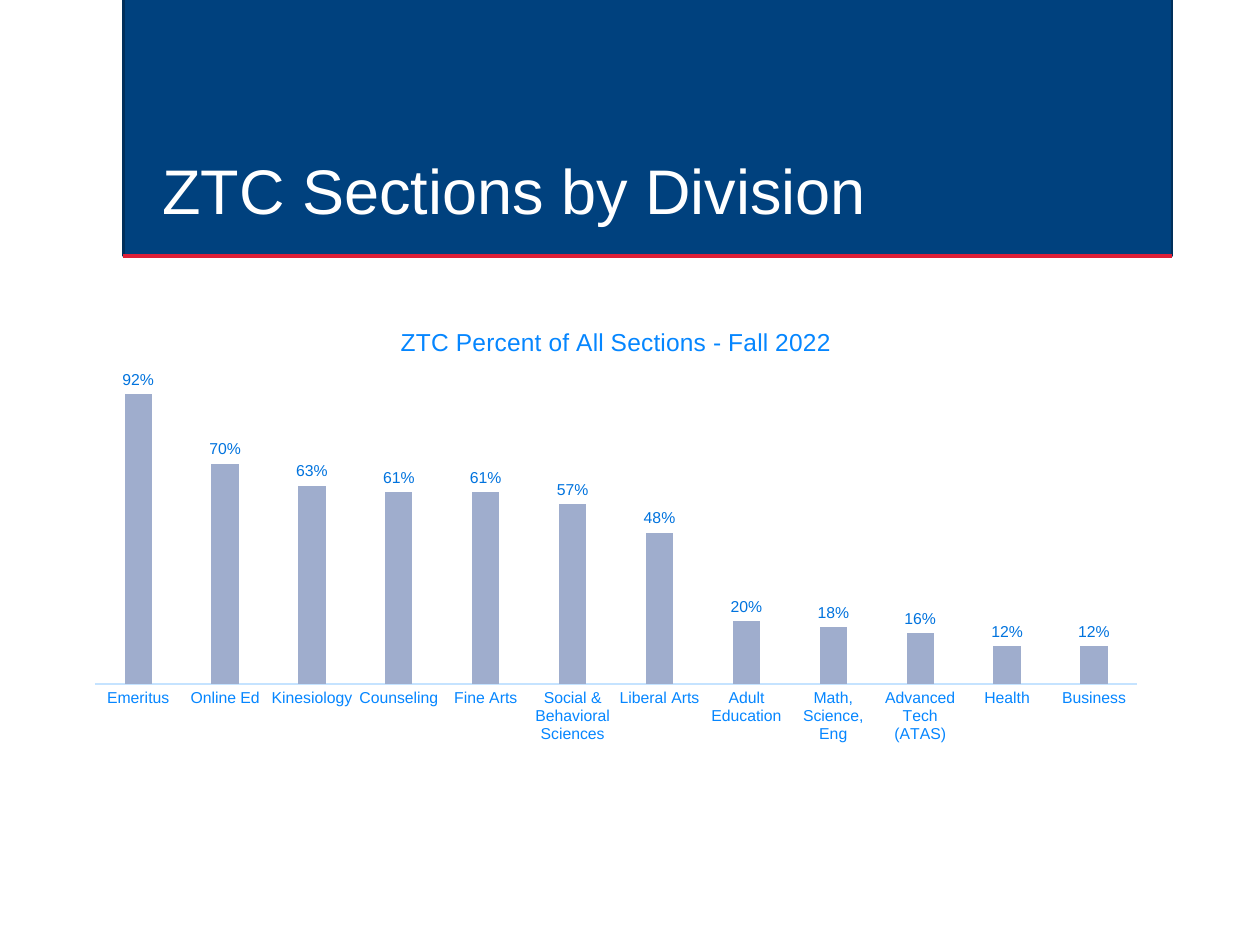
from lxml.etree import SubElement
from pptx import Presentation
from pptx.chart.data import CategoryChartData
from pptx.dml.color import RGBColor
from pptx.enum.chart import XL_CHART_TYPE, XL_LABEL_POSITION, XL_TICK_LABEL_POSITION, XL_TICK_MARK
from pptx.enum.shapes import MSO_CONNECTOR, MSO_SHAPE
from pptx.enum.text import MSO_ANCHOR
from pptx.oxml.ns import qn
from pptx.util import Inches, Pt

NAVY = RGBColor(0x00, 0x41, 0x7E)
DARK_NAVY = RGBColor(0x00, 0x2F, 0x5B)
RED = RGBColor(0xDE, 0x1F, 0x37)
WHITE = RGBColor(0xFF, 0xFF, 0xFF)
BAR_BLUE = RGBColor(0x9F, 0xAD, 0xCD)
AXIS_BLUE = RGBColor(0xC5, 0xE3, 0xFF)
TEXT_BLUE = RGBColor(0x05, 0x86, 0xFF)
VALUE_BLUE = RGBColor(0x00, 0x73, 0xDE)
FONT = "Arial"

WIDTH, HEIGHT = Inches(10), Inches(7.5)
BAND_LEFT, BAND_TOP = Inches(0.98), Inches(-0.02)
BAND_WIDTH, BAND_HEIGHT = Inches(8.32), Inches(2.05)
PLOT_SHARES = {"x": 0.02, "y": 0.14, "w": 0.96, "h": 0.7}

ZTC_SHARES = {
    "Emeritus": 0.92,
    "Online Ed": 0.70,
    "Kinesiology": 0.63,
    "Counseling": 0.61,
    "Fine Arts": 0.61,
    "Social & Behavioral Sciences": 0.57,
    "Liberal Arts": 0.48,
    "Adult Education": 0.20,
    "Math, Science, Eng": 0.18,
    "Advanced Tech (ATAS)": 0.16,
    "Health": 0.12,
    "Business": 0.12,
}


def style_font(font, size, color):
    font.name = FONT
    font.size = Pt(size)
    font.bold = False
    font.color.rgb = color


def add_band(slide):
    band = slide.shapes.add_shape(
        MSO_SHAPE.RECTANGLE, BAND_LEFT, BAND_TOP, BAND_WIDTH, BAND_HEIGHT)
    band.shadow.inherit = False
    band.fill.solid()
    band.fill.fore_color.rgb = NAVY
    band.line.color.rgb = DARK_NAVY
    band.line.width = Pt(1.25)


def add_underline(slide):
    bottom = BAND_TOP + BAND_HEIGHT
    underline = slide.shapes.add_connector(
        MSO_CONNECTOR.STRAIGHT, BAND_LEFT, bottom, BAND_LEFT + BAND_WIDTH, bottom)
    underline.line.color.rgb = RED
    underline.line.width = Pt(2.5)
    SubElement(underline._element.spPr, qn("a:effectLst"))


def add_heading(slide, wording):
    heading = slide.shapes.add_textbox(
        Inches(1.19), Inches(0.88), Inches(7.88), Inches(0.98)).text_frame
    heading.word_wrap = True
    heading.vertical_anchor = MSO_ANCHOR.BOTTOM
    line = heading.paragraphs[0]
    line.text = wording
    line.line_spacing = 0.9
    style_font(line.font, 36, WHITE)


def place_plot(chart):
    plot_area = chart._chartSpace.chart.plotArea
    for old_layout in plot_area.findall(qn("c:layout")):
        plot_area.remove(old_layout)
    layout = SubElement(plot_area, qn("c:layout"))
    plot_area.insert(0, layout)
    manual = SubElement(layout, qn("c:manualLayout"))
    settings = {"layoutTarget": "inner", "xMode": "edge", "yMode": "edge", **PLOT_SHARES}
    for tag, value in settings.items():
        SubElement(manual, qn(f"c:{tag}")).set("val", str(value))


def style_axes(chart):
    divisions = chart.category_axis
    divisions.major_tick_mark = XL_TICK_MARK.NONE
    divisions.minor_tick_mark = XL_TICK_MARK.NONE
    divisions.format.line.color.rgb = AXIS_BLUE
    divisions.format.line.width = Pt(0.75)
    style_font(divisions.tick_labels.font, 9, TEXT_BLUE)

    percent = chart.value_axis
    percent.minimum_scale = 0
    percent.maximum_scale = 1
    percent.major_unit = 0.2
    percent.has_major_gridlines = False
    percent.tick_label_position = XL_TICK_LABEL_POSITION.NONE
    percent.visible = False


def style_bars(plot):
    plot.gap_width = 219
    plot.overlap = -27
    plot.vary_by_categories = False
    bars = plot.series[0]
    bars.invert_if_negative = False
    bars.format.fill.solid()
    bars.format.fill.fore_color.rgb = BAR_BLUE
    labels = bars.data_labels
    labels.show_value = True
    labels.position = XL_LABEL_POSITION.OUTSIDE_END
    labels.number_format = "0%"
    labels.number_format_is_linked = False
    style_font(labels.font, 9, VALUE_BLUE)


def add_division_chart(slide, title):
    shares = CategoryChartData(number_format="0%")
    shares.categories = list(ZTC_SHARES)
    shares.add_series("Series 1", list(ZTC_SHARES.values()))
    chart = slide.shapes.add_chart(
        XL_CHART_TYPE.COLUMN_CLUSTERED, Inches(0.58), Inches(2.43),
        Inches(8.62), Inches(3.57), shares).chart
    style_font(chart.font, 10, NAVY)
    chart.has_legend = False
    chart.has_title = True
    caption = chart.chart_title.text_frame.paragraphs[0]
    caption.text = title
    style_font(caption.font, 14, TEXT_BLUE)
    style_axes(chart)
    style_bars(chart.plots[0])
    place_plot(chart)


def main():
    deck = Presentation()
    deck.slide_width, deck.slide_height = WIDTH, HEIGHT
    slide = deck.slides.add_slide(deck.slide_layouts[6])
    add_band(slide)
    add_underline(slide)
    add_heading(slide, "ZTC Sections by Division")
    add_division_chart(slide, "ZTC Percent of All Sections - Fall 2022")
    deck.save("out.pptx")


if __name__ == "__main__":
    main()
